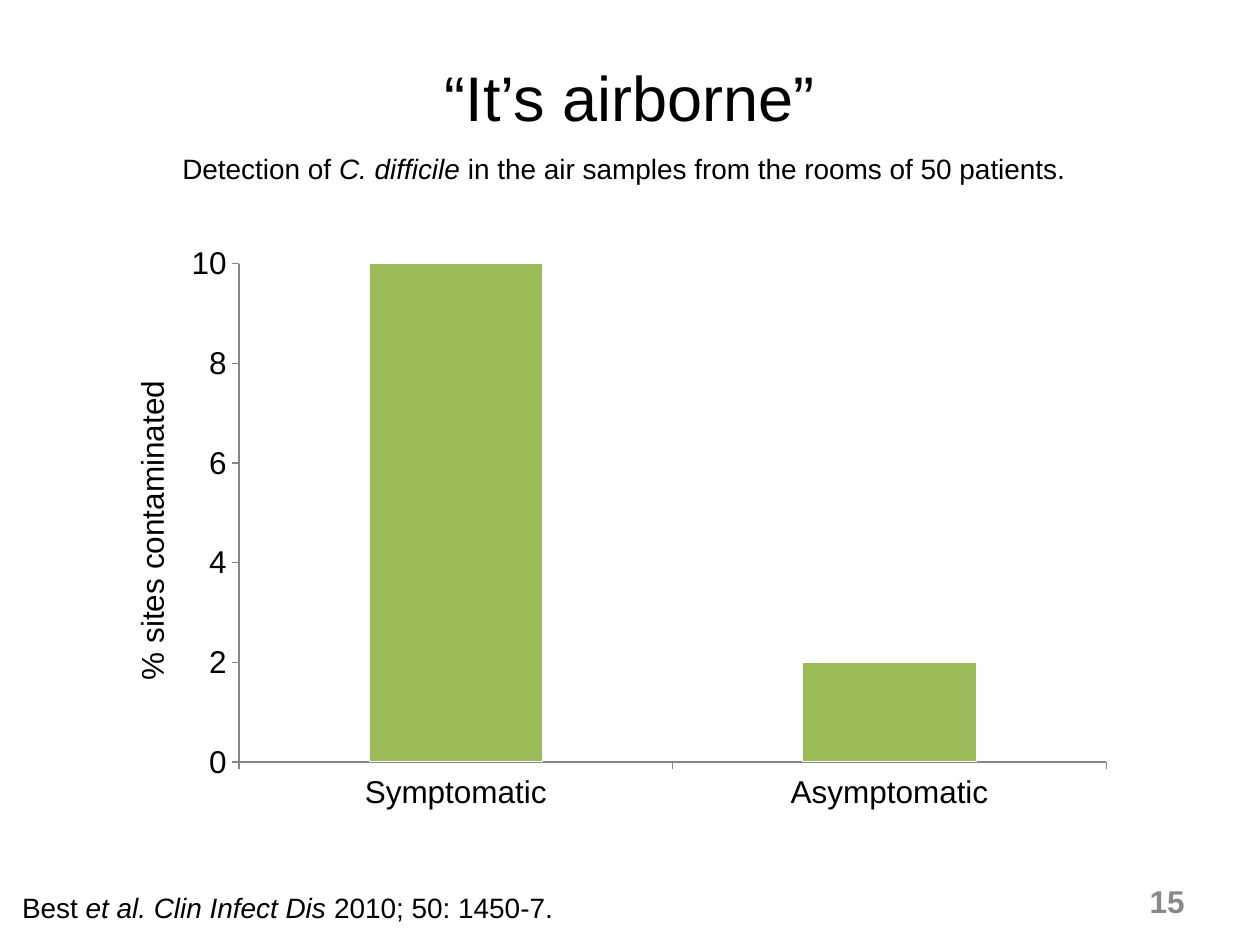
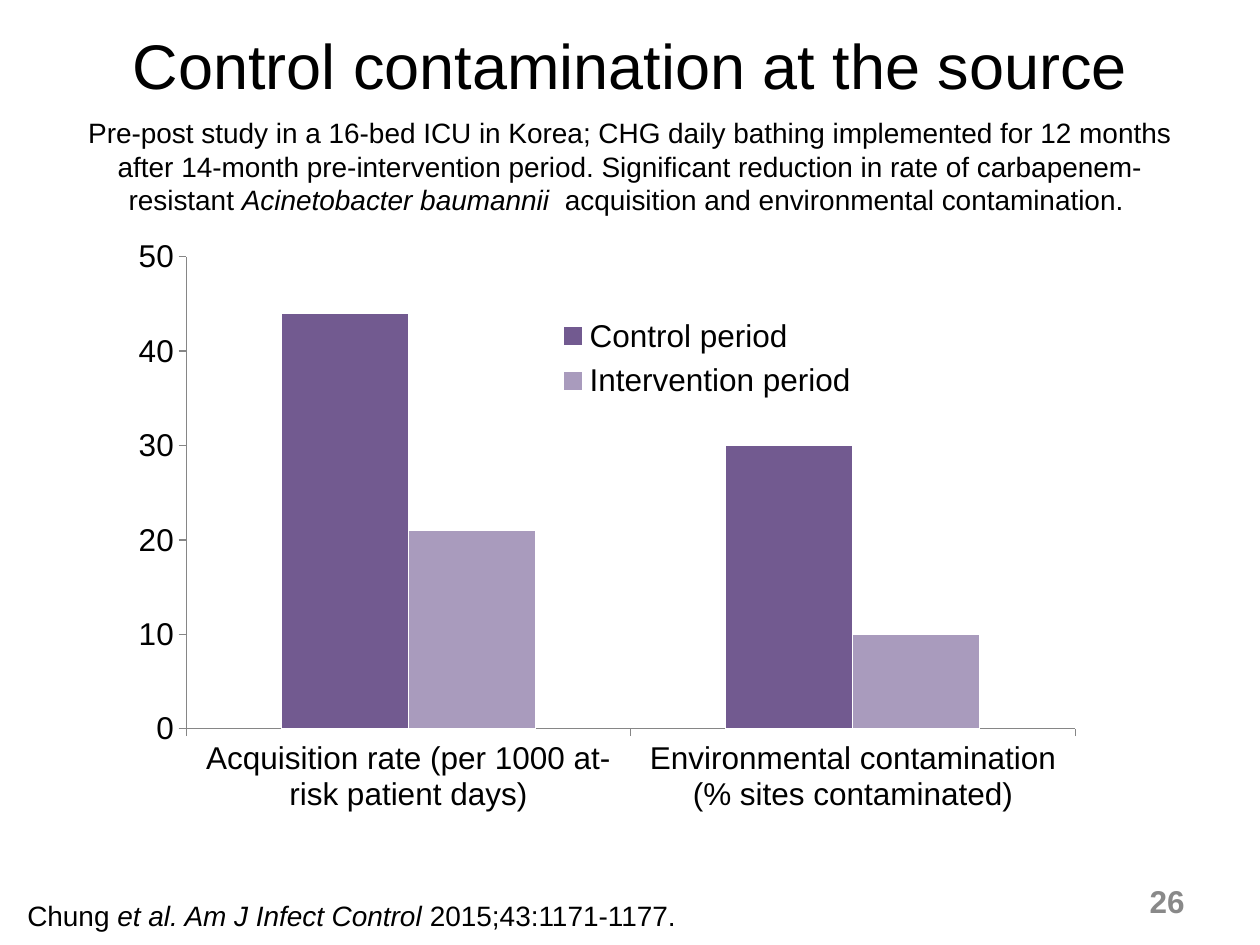
from pptx import Presentation
from pptx.chart.data import CategoryChartData
from pptx.dml.color import RGBColor
from pptx.enum.chart import XL_CHART_TYPE as CT, XL_LEGEND_POSITION as LP, XL_TICK_MARK as TM
from pptx.enum.text import MSO_ANCHOR as ANCHOR, PP_ALIGN as AL
from pptx.oxml import parse_xml
from pptx.oxml.ns import nsdecls
from pptx.util import Pt

FONT, BLACK, GREY, AXIS, WHITE = "Arial", "000000", "898989", "868686", "FFFFFF"
GREEN, PURPLE, LILAC = "9BBB59", "725A90", "A99BBD"
TITLE = dict(size=36, align=AL.CENTER, anchor=ANCHOR.MIDDLE)
NUMBER = dict(size=18, bold=True, color=GREY, align=AL.RIGHT, anchor=ANCHOR.MIDDLE)


def add_text(s, text, box, size=16, color=BLACK, bold=False,
             align=AL.LEFT, anchor=ANCHOR.TOP):
    """Add a text box; words between asterisks are set in italics."""
    tf = s.shapes.add_textbox(*map(Pt, box)).text_frame
    tf.word_wrap = True
    tf.vertical_anchor = anchor
    p = tf.paragraphs[0]
    p.alignment = align
    for i, part in enumerate(text.split("*")):
        r = p.add_run()
        r.text = part
        r.font.name, r.font.size = FONT, Pt(size)
        r.font.bold, r.font.italic = bold, i % 2 == 1
        r.font.color.rgb = RGBColor.from_string(color)


def manual_layout(x, y, w=None, h=None, inner=False):
    """Return a c:layout element in fractions of the chart area."""
    tags = '<c:layoutTarget val="inner"/>' if inner else ""
    tags += '<c:xMode val="edge"/><c:yMode val="edge"/>'
    for name, value in zip("xywh", (x, y, w, h)):
        if value is not None:
            tags += f'<c:{name} val="{value}"/>'
    return parse_xml(f'<c:layout {nsdecls("c")}><c:manualLayout>{tags}'
                     '</c:manualLayout></c:layout>')


slides = [
    dict(title="“It’s airborne”", title_top=10, number="15",
         intro="Detection of *C. difficile *in the air samples from the rooms of 50 patients.",
         intro_box=(16.5, 83, 680, 27),
         source="Best *et al. Clin Infect Dis *2010; 50: 1450-7.",
         source_box=(5.5, 505.5, 658, 27),
         chart_box=(54, 134, 590, 335), plot=(0.14, 0.05, 0.84, 0.85),
         cats=["Symptomatic", "Asymptomatic"],
         series=[("Series 1", (10, 2), GREEN)],
         top=10, step=2, axis_title="% sites contaminated", legend=None),
    dict(title="Control contamination at the source", title_top=-8, number="26",
         intro="Pre-post study in a 16-bed ICU in Korea; CHG daily bathing implemented for "
               "12 months after 14-month pre-intervention period. Significant reduction in "
               "rate of carbapenem-resistant *Acinetobacter baumannii * acquisition and "
               "environmental contamination. ",
         intro_box=(36.5, 62.5, 647, 65.5),
         source="Chung *et al. Am J Infect Control *2015;43:1171-1177.",
         source_box=(8.5, 510, 400, 27),
         chart_box=(65.5, 128, 584, 374.5), plot=(0.07, 0.05, 0.87, 0.72),
         cats=["Acquisition rate (per 1000 at-risk patient days)",
               "Environmental contamination (% sites contaminated)"],
         series=[("Control period", (44, 30), PURPLE),
                 ("Intervention period", (21, 10), LILAC)],
         top=50, step=10, axis_title=None, legend=(0.42, 0.13, 0.32, 0.15)),
]

prs = Presentation()
prs.slide_width, prs.slide_height = Pt(720), Pt(540)

for d in slides:
    s = prs.slides.add_slide(prs.slide_layouts[6])
    add_text(s, d["title"], (36, d["title_top"], 648, 90), **TITLE)
    add_text(s, d["intro"], d["intro_box"], align=AL.CENTER)
    add_text(s, d["source"], d["source_box"])
    add_text(s, d["number"], (516, 500.5, 168, 29), **NUMBER)

    data = CategoryChartData()
    data.categories = d["cats"]
    for name, values, _ in d["series"]:
        data.add_series(name, values)
    chart = s.shapes.add_chart(CT.COLUMN_CLUSTERED, *map(Pt, d["chart_box"]), data).chart
    chart.has_title = False
    chart.font.name, chart.font.size = FONT, Pt(18)
    chart.font.color.rgb = RGBColor.from_string(BLACK)

    plot = chart.plots[0]
    plot.gap_width, plot.overlap, plot.vary_by_categories = 150, 0, False
    for series, (_, _, color) in zip(plot.series, d["series"]):
        series.format.fill.solid()
        series.format.fill.fore_color.rgb = RGBColor.from_string(color)
        series.format.line.color.rgb = RGBColor.from_string(WHITE)

    plot_area = chart._chartSpace.chart.plotArea
    for old in plot_area.findall("{*}layout"):
        plot_area.remove(old)
    plot_area.insert(0, manual_layout(*d["plot"], inner=True))

    for axis in (chart.category_axis, chart.value_axis):
        axis.has_major_gridlines = False
        axis.major_tick_mark, axis.minor_tick_mark = TM.OUTSIDE, TM.NONE
        axis.format.line.color.rgb = RGBColor.from_string(AXIS)
    axis = chart.value_axis
    axis.minimum_scale, axis.maximum_scale, axis.major_unit = 0, d["top"], d["step"]

    if d["axis_title"]:
        tf = axis.axis_title.text_frame
        tf.text = d["axis_title"]
        font = tf.paragraphs[0].runs[0].font
        font.name, font.size, font.bold = FONT, Pt(18), False
        title = axis.axis_title._element
        for old in title.findall("{*}layout"):
            title.remove(old)
        title.find("{*}tx").addnext(manual_layout(0.03, 0.24))

    chart.has_legend = d["legend"] is not None
    if chart.has_legend:
        chart.legend.position = LP.RIGHT
        chart.legend.include_in_layout = False
        legend = chart.legend._element
        for old in legend.findall("{*}layout"):
            legend.remove(old)
        legend.find("{*}legendPos").addnext(manual_layout(*d["legend"]))

prs.save("out.pptx")
